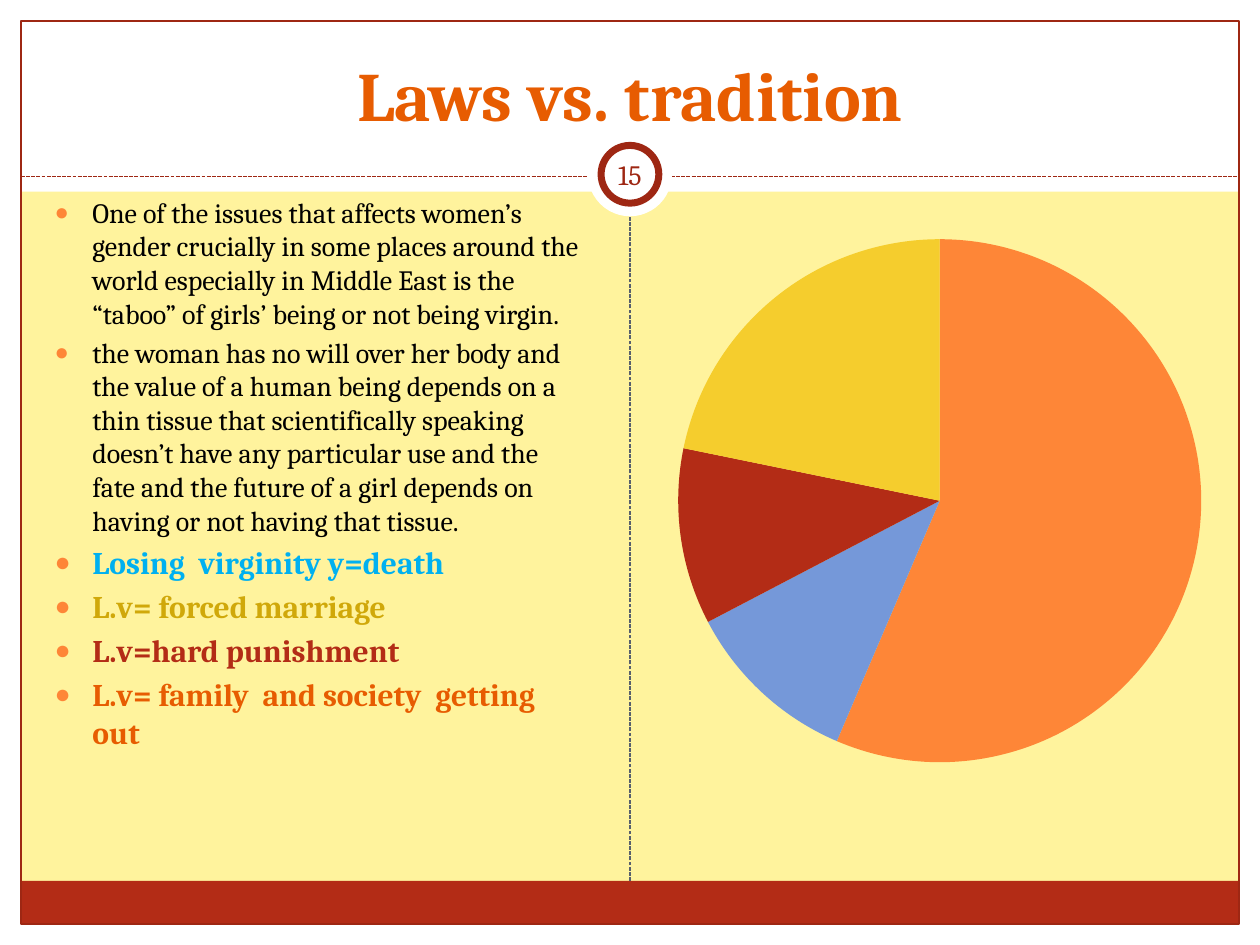
import dataclasses
import lxml.etree
import pptx
import pptx.chart.data
import pptx.dml.color
import pptx.enum.chart
import pptx.enum.dml
import pptx.enum.shapes
import pptx.enum.text
import pptx.oxml
import pptx.oxml.ns
import pptx.util

COLS, ROWS = 120, 90
CELL = pptx.util.Inches(10 / COLS)
SHAPE = pptx.enum.shapes.MSO_SHAPE
ALIGN = pptx.enum.text.PP_ALIGN
ANCHOR = pptx.enum.text.MSO_ANCHOR
qn = pptx.oxml.ns.qn


@dataclasses.dataclass
class Theme:
    font: str = "Cambria"
    title_size: float = 39.6
    text_size: float = 16
    key_size: float = 18
    black: str = "000000"
    white: str = "FFFFFF"
    paper: str = "FFF39D"
    band: str = "B32C16"
    edge: str = "9E2713"
    divider: str = "575F6D"
    title: str = "E75C01"
    bullet: str = "FE8637"
    sky: str = "00B0F0"
    gold: str = "D0A80A"
    slices: tuple = ("FE8637", "7598D9", "B32C16", "F5CD2D")


T = Theme()


def rgb(color):
    return pptx.dml.color.RGBColor.from_string(color)


def emu(*cells):
    return [round(c * CELL) for c in cells]


def place(sp, box):
    sp.left, sp.top, sp.width, sp.height = emu(*box)
    sp.element.getparent().append(sp.element)


def style(font, size, color, bold=False):
    font.name, font.size, font.bold = T.font, pptx.util.Pt(size), bold
    font.color.rgb = rgb(color)


def add_block(s, box, fill=None, line=None, width=0.75, kind=SHAPE.RECTANGLE):
    sp = s.shapes.add_shape(kind, *emu(*box))
    sp.shadow.inherit = False
    if fill:
        sp.fill.solid()
        sp.fill.fore_color.rgb = rgb(fill)
    else:
        sp.fill.background()
    if line:
        sp.line.color.rgb = rgb(line)
        sp.line.width = pptx.util.Pt(width)
    else:
        sp.line.fill.background()
    return sp


def add_dashed_line(s, start, end, color):
    ln = s.shapes.add_connector(
        pptx.enum.shapes.MSO_CONNECTOR.STRAIGHT, *emu(*start, *end))
    ln.line.color.rgb = rgb(color)
    ln.line.width = pptx.util.Pt(0.75)
    ln.line.dash_style = pptx.enum.dml.MSO_LINE.SQUARE_DOT
    lxml.etree.SubElement(ln.element.spPr, qn("a:effectLst"))


def add_frame(s, box):
    x, y, w, h = box
    s.background.fill.solid()
    s.background.fill.fore_color.rgb = rgb(T.paper)
    margins = [
        (0, y + h, COLS, ROWS - y - h),
        (0, 0, COLS, 18.25),
        (0, 0, x, ROWS),
        (x + w, 0, COLS - x - w, ROWS),
    ]
    for margin in margins:
        add_block(s, margin, T.white)
    add_block(s, (x, 83.9, w, y + h - 83.9), T.band)
    add_block(s, box, line=T.edge)
    add_dashed_line(s, (x, 16.8), (x + w, 16.8), T.edge)
    add_dashed_line(s, (COLS / 2, 83.9), (COLS / 2, 20.6), T.divider)


def add_badge(s, box, number):
    x, y, w, h = box
    inset = 1.25
    add_block(s, box, T.white, kind=SHAPE.OVAL)
    ring = (x + inset, y + inset, w - 2 * inset, h - 2 * inset)
    sp = add_block(s, ring, T.white, T.edge, 4, SHAPE.OVAL)
    tf = sp.text_frame
    tf.text = number
    tf.word_wrap = False
    tf.vertical_anchor = ANCHOR.MIDDLE
    tf.margin_left = tf.margin_right = tf.margin_top = tf.margin_bottom = 0
    p = tf.paragraphs[0]
    p.alignment = ALIGN.CENTER
    style(p.runs[0].font, T.text_size, T.edge)


def fill_title(sp, box, text):
    place(sp, box)
    tf = sp.text_frame
    tf.text = text
    tf.auto_size = pptx.enum.text.MSO_AUTO_SIZE.NONE
    tf.vertical_anchor = ANCHOR.MIDDLE
    p = tf.paragraphs[0]
    p.alignment = ALIGN.CENTER
    style(p.runs[0].font, T.title_size, T.title, True)


def set_bullet(p):
    pPr = p._p.get_or_add_pPr()
    indent = pptx.util.Inches(0.3)
    pPr.set("marL", str(indent))
    pPr.set("indent", str(-indent))
    color = lxml.etree.SubElement(pPr, qn("a:buClr"))
    lxml.etree.SubElement(color, qn("a:srgbClr"), val=T.bullet)
    lxml.etree.SubElement(pPr, qn("a:buSzPct"), val="85000")
    lxml.etree.SubElement(pPr, qn("a:buChar"), char="●")


def fill_body(sp, box, items):
    place(sp, box)
    tf = sp.text_frame
    tf.text = "\n".join(text for text, *_ in items)
    tf.auto_size = pptx.enum.text.MSO_AUTO_SIZE.NONE
    for p, (_, size, color, bold) in zip(tf.paragraphs, items):
        p.space_before = pptx.util.Pt(size * 0.2)
        set_bullet(p)
        style(p.runs[0].font, size, color, bold)


def add_pie(s, box, values):
    data = pptx.chart.data.CategoryChartData()
    data.categories = [str(i + 1) for i in range(len(values))]
    data.add_series("Series 1", values)
    kind = pptx.enum.chart.XL_CHART_TYPE.PIE
    chart = s.shapes.add_chart(kind, *emu(*box), data).chart
    chart.has_title = chart.has_legend = False
    style(chart.font, T.key_size, T.black)
    plot = chart.plots[0]
    plot.vary_by_categories = False
    for i, color in enumerate(T.slices):
        fill = plot.series[0].points[i].format.fill
        fill.solid()
        fill.fore_color.rgb = rgb(color)
    area = chart.element.find(".//" + qn("c:plotArea"))
    for old in area.findall(qn("c:layout")):
        area.remove(old)
    layout = lxml.etree.Element(qn("c:layout"))
    manual = lxml.etree.SubElement(layout, qn("c:manualLayout"))
    w = 0.94
    h = w * box[2] / box[3]
    settings = dict(layoutTarget="inner", xMode="edge", yMode="edge",
                    x=(1 - w) / 2, y=(1 - h) / 2, w=w, h=h)
    for tag, val in settings.items():
        lxml.etree.SubElement(manual, qn("c:" + tag), val=str(val))
    area.insert(0, layout)


def main():
    prs = pptx.Presentation()
    prs.slide_width, prs.slide_height = emu(COLS, ROWS)
    s = prs.slides.add_slide(prs.slide_layouts[1])
    title, body = s.placeholders
    add_frame(s, (2, 2, 116, 86))
    add_badge(s, (56, 12.6, 8, 8), "15")
    fill_title(title, (4, 4, 112, 9.8), "Laws vs. tradition")
    fill_body(body, (4, 18, 53, 61.4), [
        ("One of the issues that affects women’s gender crucially in some "
         "places around the world especially in Middle East is the “taboo” "
         "of girls’ being or not being virgin.", T.text_size, T.black, False),
        ("the woman has no will over her body and the value of a human being "
         "depends on a thin tissue that scientifically speaking doesn’t have "
         "any particular use and the fate and the future of a girl depends on "
         "having or not having that tissue.", T.text_size, T.black, False),
        ("Losing  virginity y=death", T.key_size, T.sky, True),
        ("L.v= forced marriage", T.key_size, T.gold, True),
        ("L.v=hard punishment", T.key_size, T.band, True),
        ("L.v= family  and society  getting out", T.key_size, T.title, True),
    ])
    add_pie(s, (63, 17, 53, 61.4), (57, 11, 11, 22))
    prs.save("out.pptx")


if __name__ == "__main__":
    main()
